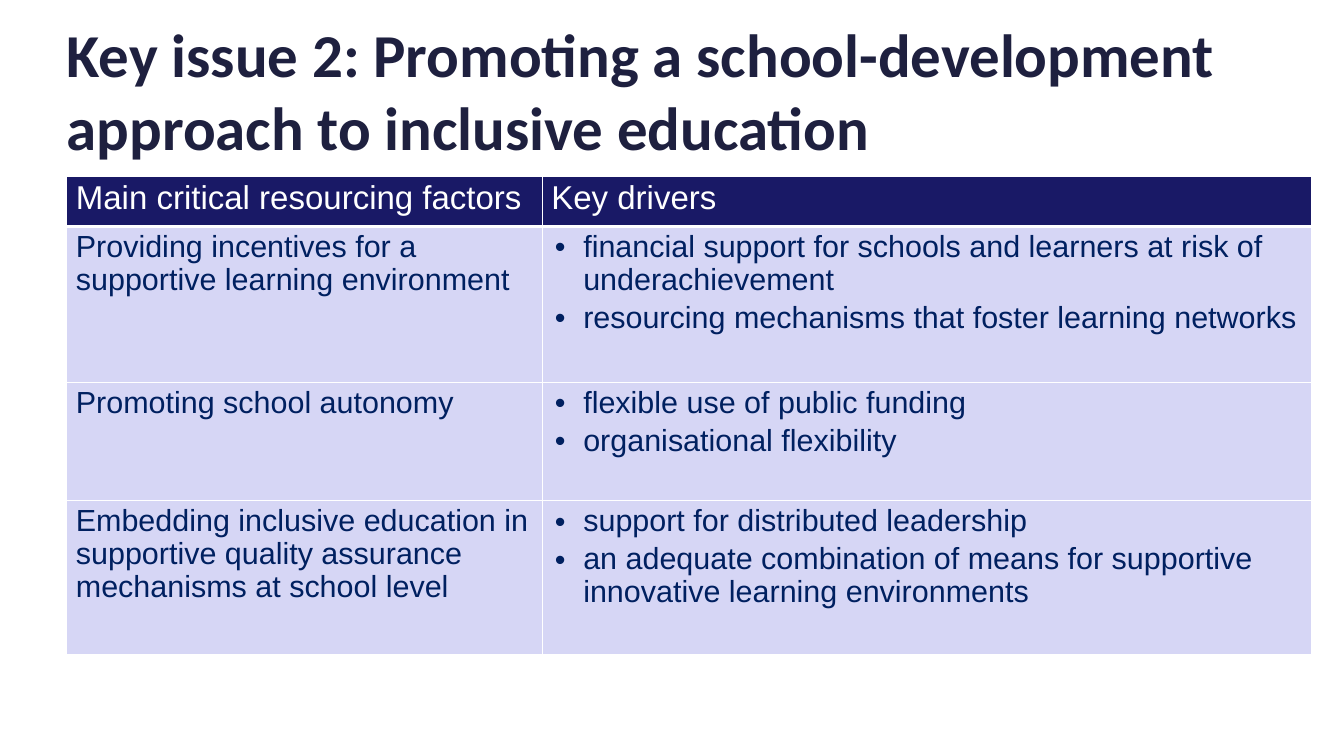
from lxml.etree import SubElement
from pptx import Presentation
from pptx.dml.color import RGBColor
from pptx.enum.text import MSO_ANCHOR, MSO_AUTO_SIZE, PP_ALIGN
from pptx.oxml.ns import qn
from pptx.util import Inches, Pt

# Content
TITLE = "Key issue 2: Promoting a school-development approach to inclusive education"
HEADERS = ["Main critical resourcing factors", "Key drivers"]
FACTORS = [
    ("Providing incentives for a supportive learning environment",
     ["financial support for schools and learners at risk of underachievement",
      "resourcing mechanisms that foster learning networks"]),
    ("Promoting school autonomy",
     ["flexible use of public funding",
      "organisational flexibility"]),
    ("Embedding inclusive education in supportive quality assurance mechanisms at school level",
     ["support for distributed leadership",
      "an adequate combination of means for supportive innovative learning environments"]),
]

# Style and layout
COLORS = {"title": "1E203F", "header": "191966", "body": "D6D6F5",
          "text": "002060", "white": "FFFFFF"}
LEFT = 0.73
COLUMN_WIDTHS = [5.2, 8.42]
ROW_HEIGHTS = [0.55, 1.7, 1.3, 1.68]


def color(name):
    return RGBColor.from_string(COLORS[name])


def add_run(paragraph, text, font_name, size, color_name, bold=False):
    run = paragraph.add_run()
    run.text = text
    run.font.name = font_name
    run.font.size = Pt(size)
    run.font.bold = bold
    run.font.color.rgb = color(color_name)


def add_bullet(paragraph):
    properties = paragraph._p.get_or_add_pPr()
    properties.set("marL", str(Inches(0.35)))
    properties.set("indent", str(Inches(-0.31)))
    SubElement(properties, qn("a:buFont"), typeface="Arial")
    SubElement(properties, qn("a:buChar"), char="•")


def set_borders(cell, bottom_width):
    properties = cell._tc.get_or_add_tcPr()
    for side, width in (("L", 1), ("R", 1), ("T", 1), ("B", bottom_width)):
        line = SubElement(properties, qn(f"a:ln{side}"), w=str(Pt(width)))
        fill = SubElement(line, qn("a:solidFill"))
        SubElement(fill, qn("a:srgbClr"), val=COLORS["white"])


def fill_cell(cell, texts, header=False, bulleted=False):
    set_borders(cell, 3 if header else 1)
    cell.fill.solid()
    cell.fill.fore_color.rgb = color("header" if header else "body")
    frame = cell.text_frame
    for index, text in enumerate(texts):
        paragraph = frame.add_paragraph() if index else frame.paragraphs[0]
        if bulleted:
            add_bullet(paragraph)
        paragraph.line_spacing = 0.97
        if not header:
            paragraph.space_before = Pt(2 if index else 0)
            paragraph.space_after = Pt(2)
        add_run(paragraph, text, "Arial", 26 if header else 24,
                "white" if header else "text")


presentation = Presentation()
presentation.slide_width = Inches(14.7)
presentation.slide_height = Inches(8.27)
slide = presentation.slides.add_slide(presentation.slide_layouts[5])

# Title
title = slide.shapes.title
title.left, title.top = Inches(LEFT), Inches(0.12)
title.width, title.height = Inches(13.22), Inches(1.73)
frame = title.text_frame
frame.margin_left = frame.margin_right = frame.margin_top = frame.margin_bottom = 0
frame.vertical_anchor = MSO_ANCHOR.MIDDLE
frame.word_wrap = True
frame.auto_size = MSO_AUTO_SIZE.NONE
frame.paragraphs[0].alignment = PP_ALIGN.LEFT
add_run(frame.paragraphs[0], TITLE, "Calibri", 48, "title", bold=True)

# Table of factors and drivers
table = slide.shapes.add_table(
    len(ROW_HEIGHTS), len(COLUMN_WIDTHS), Inches(LEFT), Inches(1.93),
    Inches(sum(COLUMN_WIDTHS)), Inches(sum(ROW_HEIGHTS))).table
for column, width in zip(table.columns, COLUMN_WIDTHS):
    column.width = Inches(width)
for row, height in zip(table.rows, ROW_HEIGHTS):
    row.height = Inches(height)
for column_index, header in enumerate(HEADERS):
    fill_cell(table.cell(0, column_index), [header], header=True)
for row_index, (factor, drivers) in enumerate(FACTORS, start=1):
    fill_cell(table.cell(row_index, 0), [factor])
    fill_cell(table.cell(row_index, 1), drivers, bulleted=True)

presentation.save("out.pptx")
